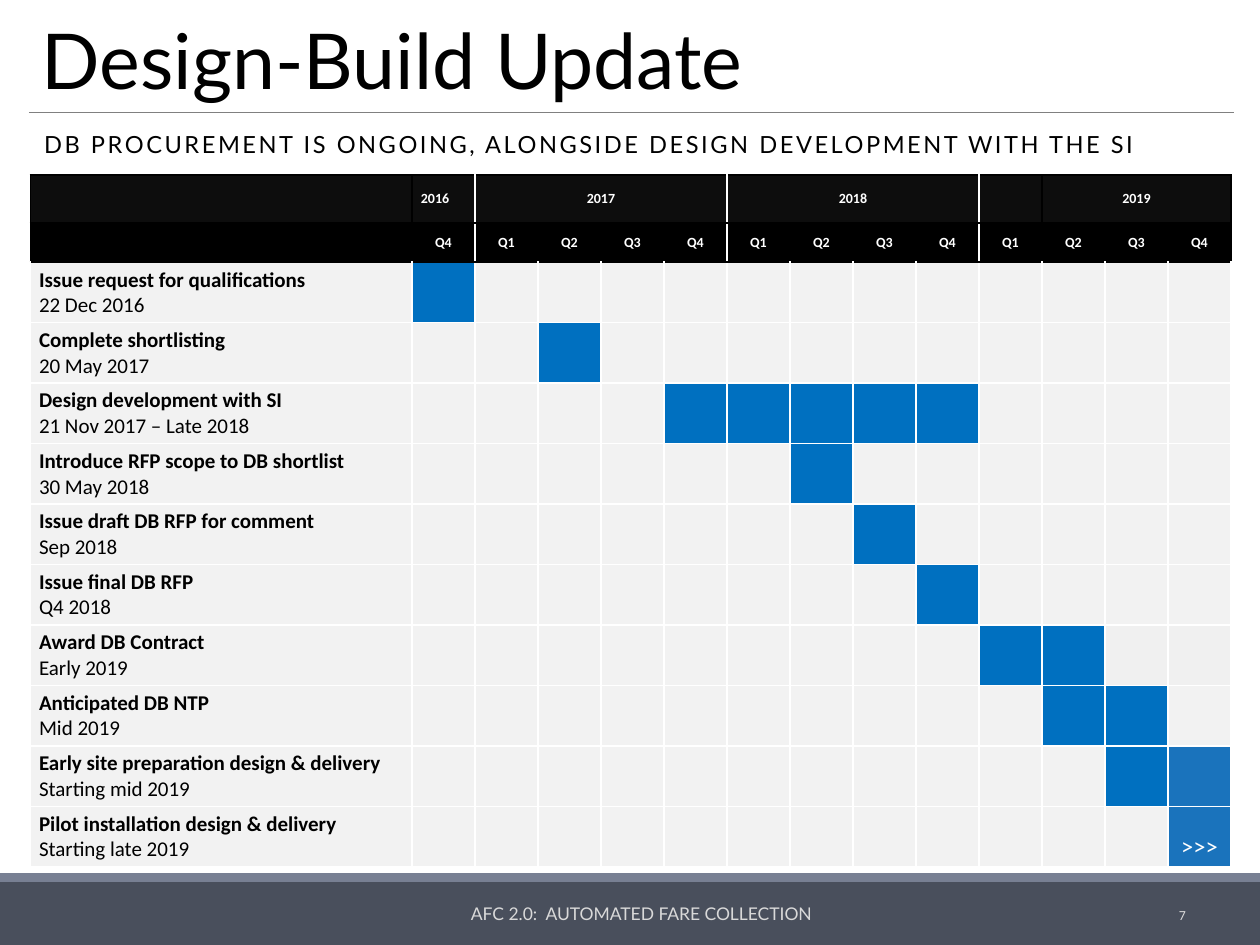
from typing import NamedTuple

from pptx import Presentation
from pptx.dml.color import RGBColor
from pptx.enum import shapes, text
from pptx.oxml import ns
from pptx.util import Inches, Pt
from lxml import etree

BLACK = RGBColor(0x00, 0x00, 0x00)
WHITE = RGBColor(0xFF, 0xFF, 0xFF)
YEAR_FILL = RGBColor(0x0D, 0x0D, 0x0D)
IDLE = RGBColor(0xF2, 0xF2, 0xF2)
IDLE_DARKER = RGBColor(0xF0, 0xF0, 0xF0)
ACTIVE = RGBColor(0x00, 0x70, 0xC0)
ONGOING = RGBColor(0x1A, 0x73, 0xBC)
FOOTER = RGBColor(0x49, 0x4F, 0x5C)
FOOTER_EDGE = RGBColor(0x78, 0x80, 0x93)
FOOTER_TEXT = RGBColor(0xD9, 0xD9, 0xD9)
RULE = RGBColor(0x80, 0x80, 0x80)

LEFT, CENTER, RIGHT = text.PP_ALIGN.LEFT, text.PP_ALIGN.CENTER, text.PP_ALIGN.RIGHT
TOP, MIDDLE, BOTTOM = text.MSO_ANCHOR.TOP, text.MSO_ANCHOR.MIDDLE, text.MSO_ANCHOR.BOTTOM


class Year(NamedTuple):
    label: str
    first: int
    last: int
    align: int = CENTER


class Task(NamedTuple):
    name: str
    date: str
    first: int
    last: int


# Column 0 holds the task; columns 1 to 13 are the quarters from Q4 2016 to Q4 2019.
QUARTERS = 13
LAST_QUARTER = QUARTERS
YEAR_ENDS = (1, 5, 9)
YEARS = [
    Year("", 0, 0),
    Year("2016", 1, 1, LEFT),
    Year("2017", 2, 5),
    Year("2018", 6, 9),
    Year("", 10, 10),
    Year("2019", 11, 13),
]
TASKS = [
    Task("Issue request for qualifications", "22 Dec 2016", 1, 1),
    Task("Complete shortlisting", "20 May 2017", 3, 3),
    Task("Design development with SI", "21 Nov 2017 – Late 2018", 5, 9),
    Task("Introduce RFP scope to DB shortlist", "30 May 2018", 7, 7),
    Task("Issue draft DB RFP for comment", "Sep 2018", 8, 8),
    Task("Issue final DB RFP", "Q4 2018", 9, 9),
    Task("Award DB Contract", "Early 2019", 10, 11),
    Task("Anticipated DB NTP", "Mid 2019", 11, 12),
    Task("Early site preparation design & delivery", "Starting mid 2019", 12, 13),
    Task("Pilot installation design & delivery", "Starting late 2019", 13, 13),
]


def add_run(paragraph, words: str, size: float, color: RGBColor,
            font: str = "Calibri", bold: bool = False):
    run = paragraph.add_run()
    run.text = words
    run.font.size = Pt(size)
    run.font.name = font
    run.font.bold = bold
    run.font.color.rgb = color
    return run


def add_bar(slide, top: float, height: float, color: RGBColor) -> None:
    bar = slide.shapes.add_shape(shapes.MSO_SHAPE.RECTANGLE, 0, Inches(top),
                                 Inches(10), Inches(height))
    bar.shadow.inherit = False
    bar.fill.solid()
    bar.fill.fore_color.rgb = color
    bar.line.fill.background()


def add_footer_text(slide, words: str, left: float, top: float, width: float,
                    size: float, font: str, align: int) -> None:
    box = slide.shapes.add_textbox(Inches(left), Inches(top), Inches(width), Inches(0.4))
    frame = box.text_frame
    frame.word_wrap = True
    frame.vertical_anchor = MIDDLE
    frame.paragraphs[0].alignment = align
    add_run(frame.paragraphs[0], words, size, FOOTER_TEXT, font)


def fill_heading(placeholder, words: str, box: tuple, size: float, anchor: int):
    """Move a title or body placeholder and give it one unbulleted line."""
    placeholder.left, placeholder.top, placeholder.width, placeholder.height = map(Inches, box)
    frame = placeholder.text_frame
    frame.auto_size = text.MSO_AUTO_SIZE.NONE
    frame.vertical_anchor = anchor
    paragraph = frame.paragraphs[0]
    properties = paragraph._p.get_or_add_pPr()
    properties.set("marL", "0")
    properties.set("indent", "0")
    etree.SubElement(properties, ns.qn("a:buNone"))
    paragraph.alignment = LEFT
    paragraph.line_spacing = 0.9
    paragraph.space_before = Pt(0)
    return add_run(paragraph, words, size, BLACK, "Lato")


def style_cell(cell, fill: RGBColor, borders: dict, anchor: int = TOP) -> None:
    """Set insets, fill and 1 pt borders, keyed by side: L, R, T, B."""
    cell.margin_left = cell.margin_right = Inches(0.07)
    cell.margin_top = cell.margin_bottom = Inches(0.04)
    cell.vertical_anchor = anchor
    properties = cell._tc.get_or_add_tcPr()
    for side in "LRTB":
        line = etree.SubElement(properties, ns.qn(f"a:ln{side}"), w=str(Pt(1)))
        solid = etree.SubElement(line, ns.qn("a:solidFill"))
        etree.SubElement(solid, ns.qn("a:srgbClr"), val=str(borders[side]))
    cell.fill.solid()
    cell.fill.fore_color.rgb = fill
    cell.text_frame.paragraphs[0]._p.get_or_add_endParaRPr().set("sz", "800")


def fill_header(table, row: int, label: str, first: int, last: int,
                align: int, fill: RGBColor) -> None:
    cell = table.cell(row, first)
    if last > first:
        cell.merge(table.cell(row, last))
    borders = {
        "L": WHITE if first - 1 in YEAR_ENDS else BLACK,
        "R": WHITE if last in YEAR_ENDS else BLACK,
        "T": BLACK,
        "B": BLACK,
    }
    for column in range(first, last + 1):
        style_cell(table.cell(row, column), fill, borders, MIDDLE)
    if label:
        paragraph = cell.text_frame.paragraphs[0]
        paragraph.alignment = align
        add_run(paragraph, label, 8, WHITE, bold=True)


def quarter_fill(task: Task, column: int) -> RGBColor:
    if task.first <= column <= task.last:
        return ONGOING if column == LAST_QUARTER else ACTIVE
    if task.name == "Award DB Contract" and column > task.last:
        return IDLE_DARKER
    return IDLE


def fill_task(table, row: int, task: Task) -> None:
    borders = dict.fromkeys("LRTB", WHITE)
    if row == 2:
        borders["T"] = BLACK
    for column in range(QUARTERS + 1):
        style_cell(table.cell(row, column), quarter_fill(task, column), borders)
    frame = table.cell(row, 0).text_frame
    add_run(frame.paragraphs[0], task.name, 12, BLACK, bold=True)
    add_run(frame.add_paragraph(), task.date, 12, BLACK)


def add_schedule(slide) -> None:
    heights = [0.38, 0.31] + [0.48] * len(TASKS)
    table = slide.shapes.add_table(len(heights), QUARTERS + 1, Inches(0.24), Inches(1.39),
                                   Inches(9.53), Inches(sum(heights))).table
    for column, width in zip(table.columns, [3.03] + [0.5] * QUARTERS):
        column.width = Inches(width)
    for row, height in zip(table.rows, heights):
        row.height = Inches(height)
    for year in YEARS:
        fill_header(table, 0, year.label, year.first, year.last, year.align, YEAR_FILL)
    for column in range(QUARTERS + 1):
        label = f"Q{(column + 2) % 4 + 1}" if column else ""
        fill_header(table, 1, label, column, column, CENTER, BLACK)
    for row, task in enumerate(TASKS, start=2):
        fill_task(table, row, task)
    continues = table.cell(len(heights) - 1, LAST_QUARTER)
    continues.vertical_anchor = BOTTOM
    continues.text_frame.paragraphs[0].alignment = CENTER
    add_run(continues.text_frame.paragraphs[0], ">>>", 14, WHITE)


def main() -> None:
    deck = Presentation()
    deck.slide_width, deck.slide_height = Inches(10), Inches(7.5)
    slide = deck.slides.add_slide(deck.slide_layouts[1])
    add_bar(slide, 7, 0.5, FOOTER)
    add_bar(slide, 6.93, 0.07, FOOTER_EDGE)
    rule = slide.shapes.add_connector(shapes.MSO_CONNECTOR.STRAIGHT, Inches(0.23),
                                      Inches(0.89), Inches(9.79), Inches(0.89))
    rule.line.color.rgb = RULE
    rule.line.width = Pt(0.5)
    etree.SubElement(rule._element.spPr, ns.qn("a:effectLst"))
    fill_heading(slide.shapes.title, "Design-Build Update", (0.23, 0, 9.56, 0.89), 44, BOTTOM)
    subtitle = fill_heading(
        slide.placeholders[1],
        "DB PROCUREMENT IS ONGOING, ALONGSIDE DESIGN DEVELOPMENT WITH THE SI",
        (0.25, 1.01, 9.56, 0.7), 13.5, TOP)
    subtitle.font._element.set("spc", "150")
    add_footer_text(slide, "7", 8.43, 7.06, 1.08, 7.9, "Calibri", RIGHT)
    add_footer_text(slide, "AFC 2.0:  AUTOMATED FARE COLLECTION", 3.36, 7.05, 3.46, 10,
                    "Lato", CENTER)
    add_schedule(slide)
    deck.save("out.pptx")


if __name__ == "__main__":
    main()
